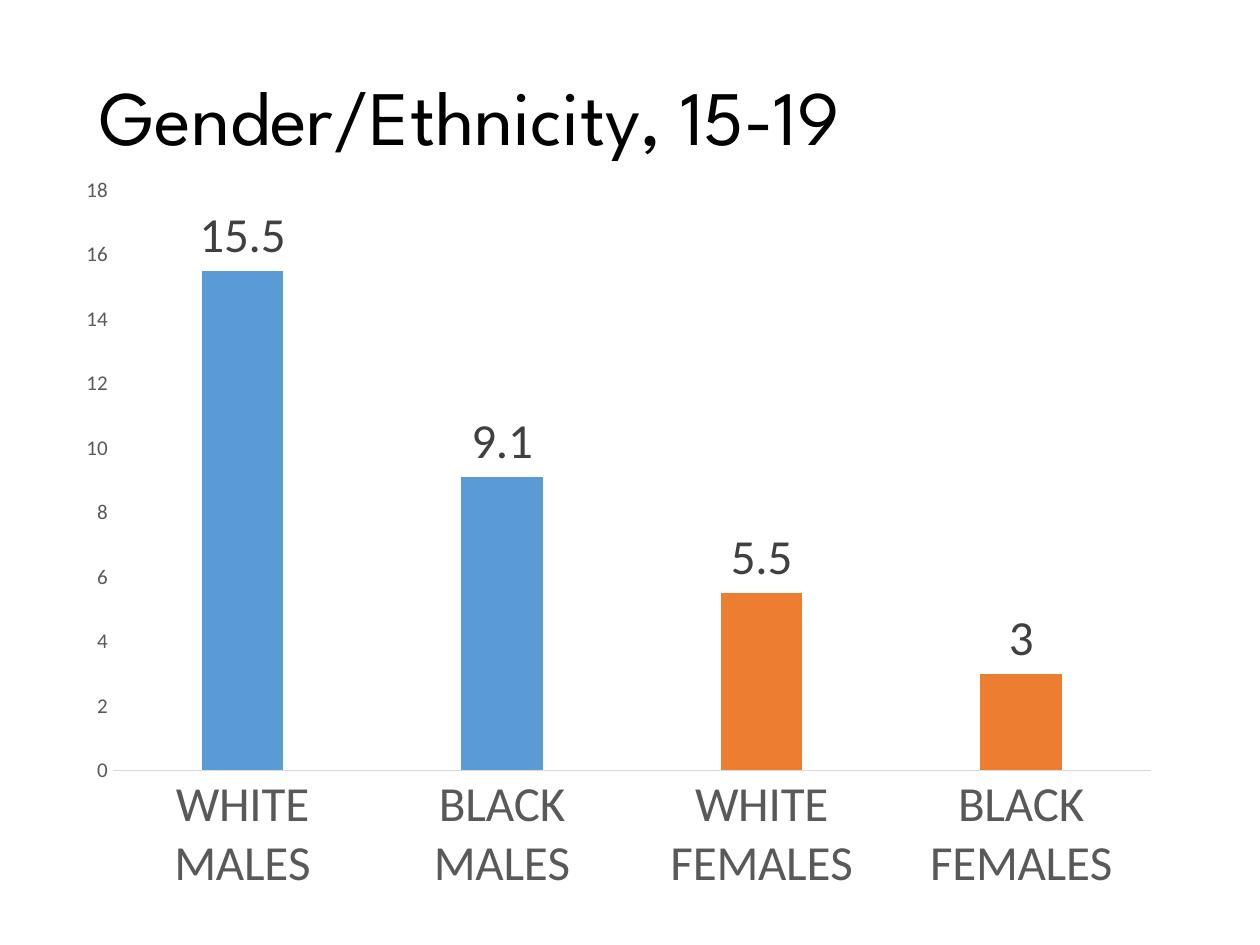
from pptx import Presentation
from pptx.chart.data import CategoryChartData
from pptx.dml.color import RGBColor
from pptx.enum.chart import XL_CHART_TYPE, XL_LABEL_POSITION, XL_TICK_MARK
from pptx.enum.text import MSO_ANCHOR, MSO_AUTO_SIZE, PP_ALIGN
from pptx.util import Inches, Pt

COLORS = {
    "ink": "000000",
    "label": "404040",
    "axis": "595959",
    "rule": "D9D9D9",
    "male": "5B9BD5",
    "female": "ED7D31",
}
RATES = {
    "WHITE MALES": 15.5,
    "BLACK MALES": 9.1,
    "WHITE FEMALES": 5.5,
    "BLACK FEMALES": 3,
}


def color(name):
    return RGBColor.from_string(COLORS[name])


def style(font, size, tone, face="Calibri"):
    font.name = face
    font.size = Pt(size)
    font.bold = False
    font.color.rgb = color(tone)


def write(frame, text, size=44, tone="ink", face="League Spartan", spacing=0.9):
    frame.word_wrap = True
    frame.auto_size = MSO_AUTO_SIZE.NONE
    frame.vertical_anchor = MSO_ANCHOR.MIDDLE
    para = frame.paragraphs[0]
    para.alignment = PP_ALIGN.LEFT
    para.line_spacing = spacing
    run = para.add_run()
    run.text = text
    style(run.font, size, tone, face)


class Deck:
    def __init__(self):
        self.file = Presentation()
        self.file.slide_width = Inches(10)
        self.file.slide_height = Inches(7.5)
        self.slide = self.file.slides.add_slide(self.file.slide_layouts[5])

    def title(self, text, left, top, width, height):
        shape = self.slide.shapes.title
        shape.left, shape.top = Inches(left), Inches(top)
        shape.width, shape.height = Inches(width), Inches(height)
        write(shape.text_frame, text)

    def chart(self, rates, left, top, width, height):
        data = CategoryChartData()
        data.categories = list(rates)
        data.add_series("Series 1", list(rates.values()))
        chart = self.slide.shapes.add_chart(
            XL_CHART_TYPE.COLUMN_CLUSTERED,
            Inches(left), Inches(top), Inches(width), Inches(height), data,
        ).chart
        chart.has_legend = False
        chart.has_title = False
        style(chart.font, 10, "ink")
        self.axis(chart.category_axis, 28)
        self.axis(chart.value_axis, 12)
        line = chart.category_axis.format.line
        line.color.rgb = color("rule")
        line.width = Pt(0.75)
        scale = chart.value_axis
        scale.format.line.fill.background()
        scale.minimum_scale, scale.maximum_scale, scale.major_unit = 0, 18, 2
        self.bars(chart.plots[0], list(rates))

    def axis(self, axis, size):
        axis.has_major_gridlines = False
        axis.major_tick_mark = axis.minor_tick_mark = XL_TICK_MARK.NONE
        style(axis.tick_labels.font, size, "axis")

    def bars(self, plot, names):
        plot.gap_width = 219
        plot.overlap = -27
        plot.vary_by_categories = False
        series = plot.series[0]
        series.format.fill.solid()
        series.format.fill.fore_color.rgb = color("male")
        for index, name in enumerate(names):
            if name.endswith("FEMALES"):
                fill = series.points[index].format.fill
                fill.solid()
                fill.fore_color.rgb = color("female")
        labels = series.data_labels
        labels.show_value = True
        labels.position = XL_LABEL_POSITION.OUTSIDE_END
        style(labels.font, 28, "label")


def main():
    deck = Deck()
    deck.title("Gender/Ethnicity, 15-19", 0.69, 0.4, 8.62, 1.11)
    deck.chart(RATES, 0.51, 1.29, 8.8, 5.92)
    deck.file.save("out.pptx")


if __name__ == "__main__":
    main()
